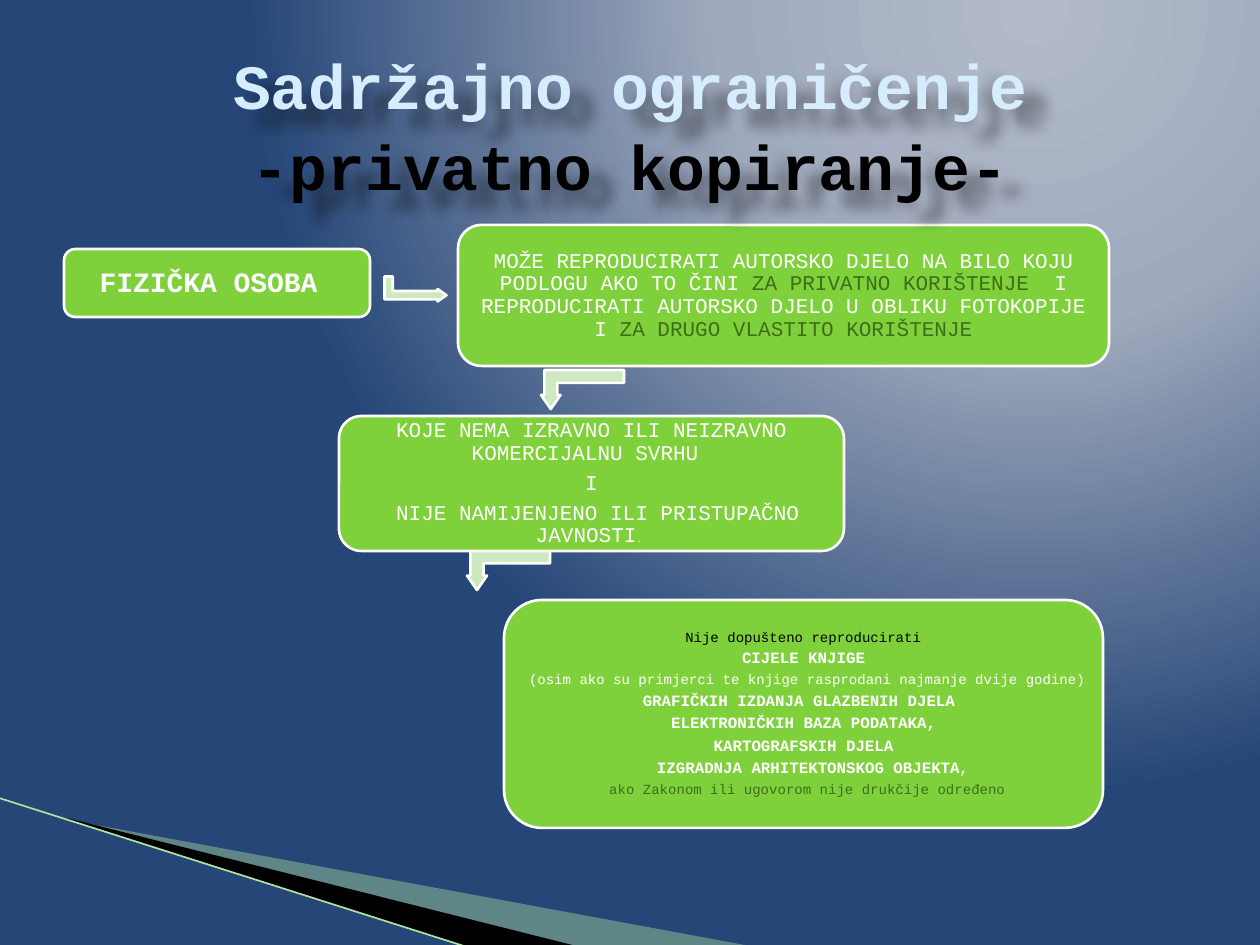
from dataclasses import dataclass

from pptx import Presentation
from pptx.dml.color import RGBColor
from pptx.enum.shapes import MSO_CONNECTOR, MSO_SHAPE
from pptx.enum.text import MSO_ANCHOR, PP_ALIGN
from pptx.oxml import parse_xml
from pptx.oxml.ns import nsdecls, qn
from pptx.util import Emu, Pt

EMU_PER_PX = 914400 / 126


@dataclass(frozen=True)
class Theme:
    font: str = "Courier New"
    title: str = "D6ECFF"
    white: str = "FFFFFF"
    black: str = "000000"
    box: str = "7FD13B"
    arrow: str = "CCE9BF"
    accent: str = "3F6D19"
    wedge: str = "B8E7A1"
    edge: str = "B1E399"
    background: tuple = ((0, "B3BBC9"), (40, "A0AABD"), (100, "254677"))
    title_size: int = 36
    lead_size: int = 16
    body_size: int = 12
    strong_size: int = 9
    small_size: int = 8
    tiny_size: int = 5
    outline: float = 1.5


THEME = Theme()


@dataclass(frozen=True)
class Span:
    text: str
    size: int = THEME.body_size
    color: str = THEME.white
    bold: bool = False


@dataclass(frozen=True)
class Frame:
    left: int
    top: int
    width: int
    height: int


@dataclass(frozen=True)
class Box:
    frame: Frame
    inset: int
    paras: tuple


@dataclass(frozen=True)
class Arrow:
    frame: Frame
    rotation: int


def px(value: float) -> Emu:
    return Emu(round(value * EMU_PER_PX))


def place(frame: Frame) -> tuple:
    return px(frame.left), px(frame.top), px(frame.width), px(frame.height)


def small(text: str, color: str = THEME.white) -> Span:
    return Span(text, THEME.small_size, color)


def strong(text: str) -> Span:
    return Span(text, THEME.strong_size, bold=True)


def style_run(run, span: Span) -> None:
    run.font.name = THEME.font
    run.font.size = Pt(span.size)
    run.font.bold = span.bold
    run.font.color.rgb = RGBColor.from_string(span.color)


def paint(shape, color: str) -> None:
    shape.shadow.inherit = False
    shape.fill.solid()
    shape.fill.fore_color.rgb = RGBColor.from_string(color)


def add_outlined(page, kind, frame: Frame, color: str):
    shape = page.shapes.add_shape(kind, *place(frame))
    paint(shape, color)
    shape.line.color.rgb = RGBColor.from_string(THEME.white)
    shape.line.width = Pt(THEME.outline)
    return shape


def add_box(page, box: Box) -> None:
    shape = add_outlined(page, MSO_SHAPE.ROUNDED_RECTANGLE, box.frame, THEME.box)
    frame = shape.text_frame
    frame.word_wrap = True
    frame.vertical_anchor = MSO_ANCHOR.MIDDLE
    frame.margin_left = frame.margin_right = px(box.inset)
    frame.margin_top = frame.margin_bottom = px(box.inset)
    for index, spans in enumerate(box.paras):
        para = frame.add_paragraph() if index else frame.paragraphs[0]
        para.alignment = PP_ALIGN.CENTER
        para.line_spacing = 0.9
        para.space_after = Pt(0.35 * max(span.size for span in spans))
        for span in spans:
            run = para.add_run()
            run.text = span.text
            style_run(run, span)


def add_arrow(page, arrow: Arrow) -> None:
    shape = add_outlined(page, MSO_SHAPE.BENT_UP_ARROW, arrow.frame, THEME.arrow)
    shape.rotation = arrow.rotation
    for index, value in enumerate((0.33, 0.25, 0.36)):
        shape.adjustments[index] = value


def add_wedge(page, points: tuple, color: str, opacity: int = 100) -> None:
    builder = page.shapes.build_freeform(*points[0], scale=EMU_PER_PX)
    builder.add_line_segments(points[1:])
    shape = builder.convert_to_shape()
    paint(shape, color)
    shape.line.fill.background()
    if opacity < 100:
        tint = shape.fill._xPr.find(qn("a:solidFill"))[0]
        tint.append(parse_xml(f'<a:alpha {nsdecls("a")} val="{opacity * 1000}"/>'))


def add_background(page) -> None:
    page.background.fill.gradient()
    old = next(page.element.iter(qn("a:gradFill")))
    stops = "".join(
        f'<a:gs pos="{position * 1000}"><a:srgbClr val="{color}"/></a:gs>'
        for position, color in THEME.background)
    old.getparent().replace(old, parse_xml(
        f'<a:gradFill {nsdecls("a")} rotWithShape="1"><a:gsLst>{stops}</a:gsLst>'
        '<a:path path="circle"><a:fillToRect l="65000" t="0" r="0" b="98000"/>'
        '</a:path></a:gradFill>'))


def add_edge(page) -> None:
    line = page.shapes.add_connector(
        MSO_CONNECTOR.STRAIGHT, px(-1), px(798), px(467), px(947))
    line.line.color.rgb = RGBColor.from_string(THEME.edge)
    line.line.width = Pt(0.95)
    line._element.spPr.append(parse_xml(f'<a:effectLst {nsdecls("a")}/>'))


def add_title(page) -> None:
    title = page.shapes.add_textbox(*place(Frame(63, 38, 1134, 158)))
    frame = title.text_frame
    frame.word_wrap = True
    frame.vertical_anchor = MSO_ANCHOR.MIDDLE
    frame.margin_top = px(16)
    para = frame.paragraphs[0]
    para.text = "Sadržajno ograničenje\v-privatno kopiranje-"
    para.alignment = PP_ALIGN.CENTER
    para.line_spacing = 1.07
    for run, color in zip(para.runs, (THEME.title, THEME.black)):
        style_run(run, Span(run.text, THEME.title_size, color, True))
    title._element.spPr.append(parse_xml(
        f'<a:effectLst {nsdecls("a")}><a:outerShdw blurRad="100000" dist="190000" '
        'dir="2400000" algn="tl" rotWithShape="0"><a:srgbClr val="000000">'
        '<a:alpha val="45000"/></a:srgbClr></a:outerShdw></a:effectLst>'))


# Flow chart, from back to front
FLOW = (
    Arrow(Frame(403, 258, 25, 62), 90),
    Box(Frame(64, 249, 306, 68), 9, (
        (Span("FIZIČKA OSOBA ", THEME.lead_size, bold=True),),)),
    Arrow(Frame(541, 370, 83, 39), 180),
    Box(Frame(458, 225, 651, 141), 6, ((
        Span("MOŽE REPRODUCIRATI AUTORSKO DJELO NA BILO KOJU PODLOGU AKO TO ČINI "),
        Span("ZA PRIVATNO KORIŠTENJE  ", color=THEME.accent),
        Span("I REPRODUCIRATI AUTORSKO DJELO U OBLIKU FOTOKOPIJE I "),
        Span("ZA DRUGO VLASTITO KORIŠTENJE", color=THEME.accent)),)),
    Arrow(Frame(467, 550, 83, 40), 180),
    Box(Frame(339, 416, 505, 135), 6, (
        (Span("KOJE NEMA IZRAVNO ILI NEIZRAVNO KOMERCIJALNU SVRHU "),),
        (Span("I"),),
        (Span(" NIJE NAMIJENJENO ILI PRISTUPAČNO JAVNOSTI"),
         Span(". ", THEME.tiny_size)))),
    Box(Frame(504, 600, 599, 228), 4, (
        (small("Nije dopušteno reproducirati", THEME.black),),
        (strong("CIJELE KNJIGE"),),
        (small(" (osim ako su primjerci te knjige rasprodani najmanje dvije godine)"),),
        (strong("GRAFIČKIH IZDANJA GLAZBENIH DJELA "),),
        (strong("ELEKTRONIČKIH BAZA PODATAKA,"),),
        (strong("KARTOGRAFSKIH DJELA"),),
        (strong("  IZGRADNJA ARHITEKTONSKOG OBJEKTA"), Span(",", THEME.strong_size)),
        (small(" ako Zakonom ili ugovorom nije drukčije određeno", THEME.accent),))),
)


def main() -> None:
    deck = Presentation()
    deck.slide_width, deck.slide_height = px(1260), px(945)
    page = deck.slides.add_slide(deck.slide_layouts[6])

    # Background and corner decoration
    add_background(page)
    add_wedge(page, ((69, 820), (750, 946), (575, 946), (69, 819)), THEME.wedge, 40)
    add_wedge(page, ((67, 818), (576, 946), (469, 947), (68, 819)), THEME.black)
    add_edge(page)

    # Flow chart and title
    for part in FLOW:
        if isinstance(part, Box):
            add_box(page, part)
        else:
            add_arrow(page, part)
    add_title(page)
    deck.save("out.pptx")


if __name__ == "__main__":
    main()
